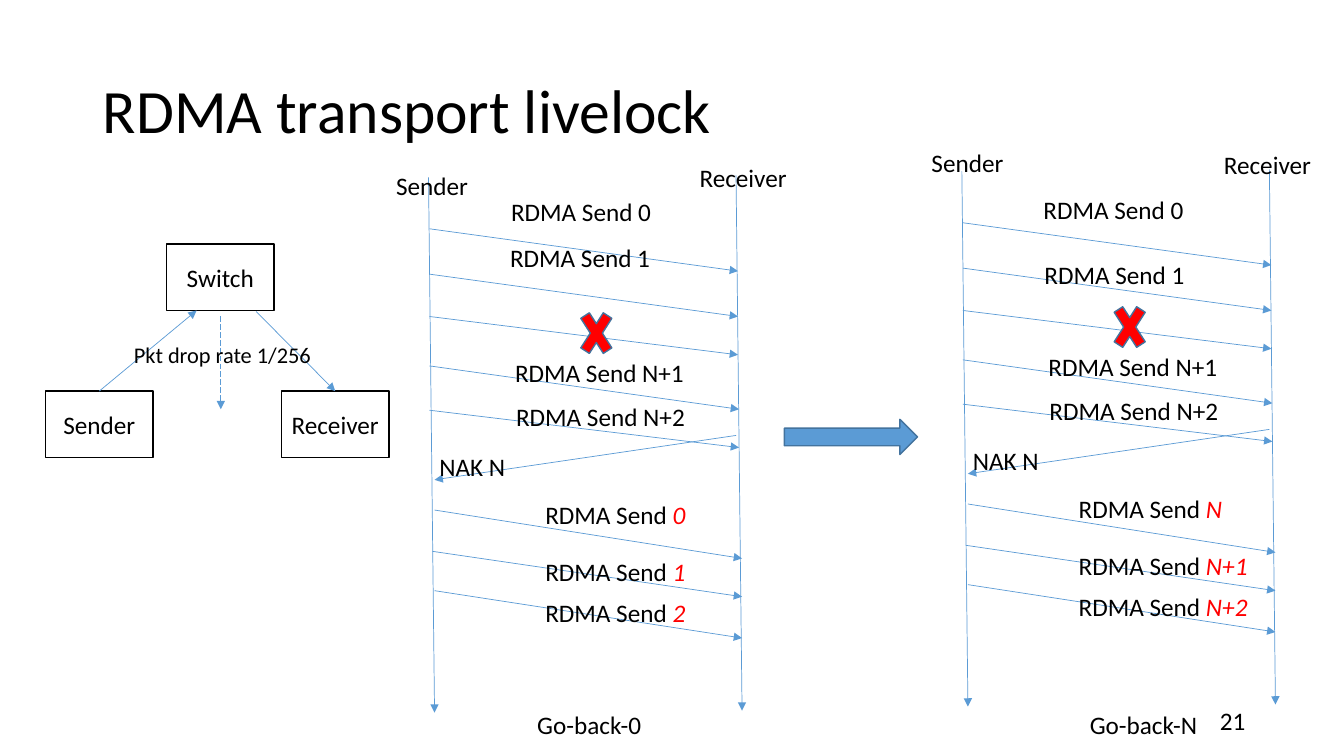
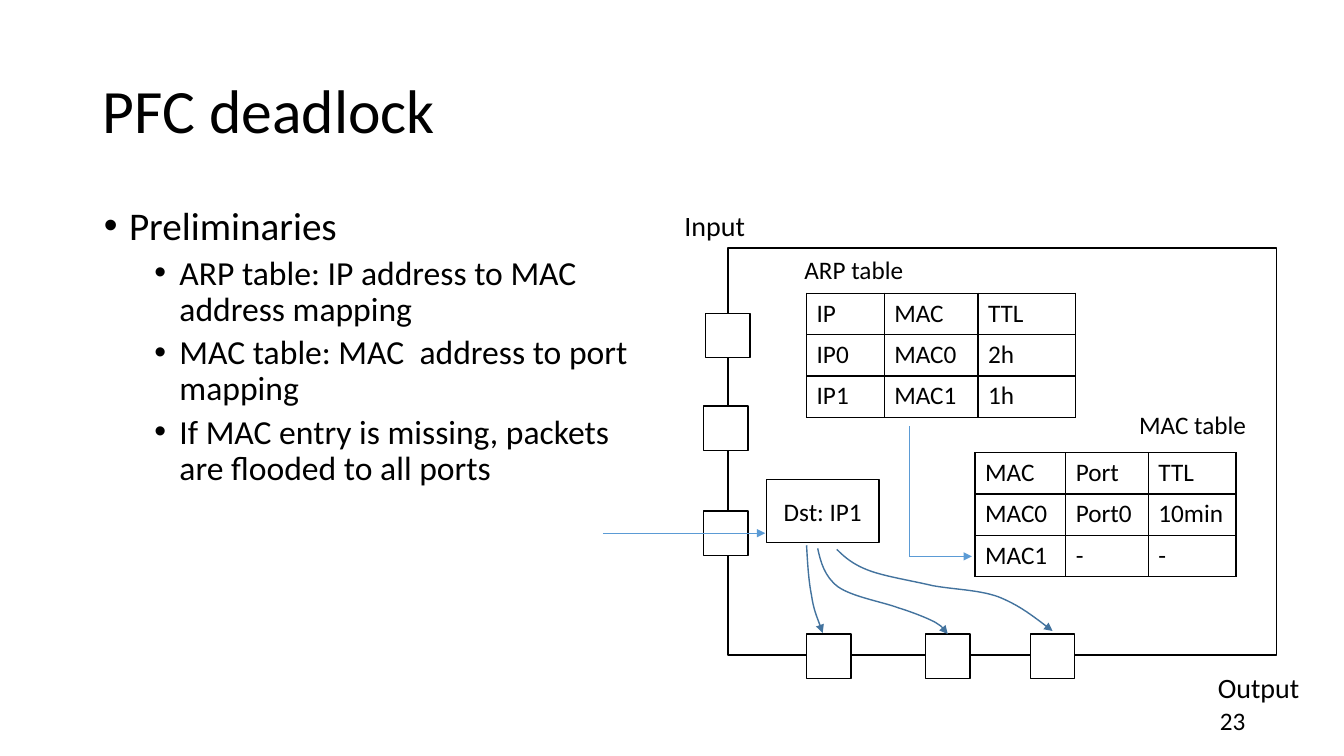
from lxml import etree
from pptx import Presentation
from pptx import util as u
from pptx.dml.color import RGBColor
from pptx.enum import dml, shapes, text
from pptx.oxml import ns

PX = 9144  # EMU per px, 100 px to the inch
FONT = "Calibri"
COLORS = {
    "ink": "000000",
    "paper": "FFFFFF",
    "line": "5B9BD5",
    "outline": "43739E",
    "alert": "FF0000",
}
TITLE_ONLY, TITLE_AND_BODY = 5, 1
SHAPE = shapes.MSO_SHAPE


def px(*values):
    return [u.Emu(value * PX) for value in values]


def color(name):
    return RGBColor.from_string(COLORS[name])


def sub_element(parent, tag, **attributes):
    return etree.SubElement(parent, ns.qn(tag), attributes)


# Text

def format_runs(paragraph, size, ink="ink"):
    for run in paragraph.runs:
        run.font.name = FONT
        run.font.size = u.Pt(size)
        run.font.color.rgb = color(ink)


def add_label(slide, left, top, width, words, size=18, accent=None):
    """Unwrapped text; the accent follows in red italics."""
    box = slide.shapes.add_textbox(*px(left, top, width, size * 2 + 4))
    frame = box.text_frame
    frame.word_wrap = False
    frame.auto_size = text.MSO_AUTO_SIZE.SHAPE_TO_FIT_TEXT
    frame.text = words
    paragraph = frame.paragraphs[0]
    format_runs(paragraph, size)
    if accent:
        run = paragraph.add_run()
        run.text = accent
        run.font.name = FONT
        run.font.size = u.Pt(size)
        run.font.italic = True
        run.font.color.rgb = color("alert")


def place(shape, left, top, width, height):
    shape.left, shape.top, shape.width, shape.height = px(left, top, width, height)


def new_slide(presentation, layout, title, number):
    slide = presentation.slides.add_slide(presentation.slide_layouts[layout])
    heading = slide.shapes.title
    place(heading, 92, 40, 1150, 145)
    frame = heading.text_frame
    frame.text = title
    frame.auto_size = text.MSO_AUTO_SIZE.NONE
    frame.vertical_anchor = text.MSO_ANCHOR.MIDDLE
    paragraph = frame.paragraphs[0]
    paragraph.alignment = text.PP_ALIGN.LEFT
    paragraph.line_spacing = 0.9
    format_runs(paragraph, 44)
    add_label(slide, 1200, 695, 50, str(number))
    return slide


def fill_list(body, items):
    """Bulleted list from (level, words) pairs."""
    frame = body.text_frame
    frame.text = "\n".join(words for _, words in items)
    frame.auto_size = text.MSO_AUTO_SIZE.NONE
    for paragraph, (level, _) in zip(frame.paragraphs, items):
        paragraph.level = level
        paragraph.line_spacing = 0.9
        paragraph.space_before = u.Pt(5 if level else 10)
        format_runs(paragraph, 24 if level else 28)
        properties = paragraph._p.get_or_add_pPr()
        properties.set("marL", str((25 + 50 * level) * PX))
        properties.set("indent", str(-25 * PX))
        sub_element(properties, "a:buFont", typeface="Arial")
        sub_element(properties, "a:buChar", char="•")


# Shapes and lines

def add_block(slide, kind, left, top, width, height, fill="paper", line="ink"):
    shape = slide.shapes.add_shape(kind, *px(left, top, width, height))
    shape.shadow.inherit = False
    shape.fill.solid()
    shape.fill.fore_color.rgb = color(fill)
    shape.line.color.rgb = color(line)
    shape.line.width = u.Pt(1)
    return shape


def add_box(slide, left, top, width, height, words):
    box = add_block(slide, SHAPE.RECTANGLE, left, top, width, height)
    frame = box.text_frame
    frame.text = words
    frame.word_wrap = False
    frame.vertical_anchor = text.MSO_ANCHOR.MIDDLE
    frame.paragraphs[0].alignment = text.PP_ALIGN.CENTER
    format_runs(frame.paragraphs[0], 18)
    return box


def add_arrowhead(shape):
    sub_element(shape.line._get_or_add_ln(), "a:tailEnd", type="triangle")


def add_line(slide, x1, y1, x2, y2, arrow=True, dashed=False):
    line = slide.shapes.add_connector(
        shapes.MSO_CONNECTOR.STRAIGHT, *px(x1, y1, x2, y2))
    line.line.color.rgb = color("line")
    line.line.width = u.Pt(0.5)
    if dashed:
        line.line.dash_style = dml.MSO_LINE.LONG_DASH
    if arrow:
        add_arrowhead(line)
    sub_element(line.element.spPr, "a:effectLst")
    return line


def add_curve(slide, start, controls):
    """Open Bezier curve; every three control points make one segment."""
    builder = slide.shapes.build_freeform(*start, scale=PX)
    builder.add_line_segments(controls, close=False)
    curve = builder.convert_to_shape()
    segments = list(curve.element.iter(ns.qn("a:lnTo")))
    outline = segments[0].getparent()
    for index in range(0, len(segments), 3):
        bezier = sub_element(outline, "a:cubicBezTo")
        for segment in segments[index:index + 3]:
            bezier.append(segment[0])
            outline.remove(segment)
    curve.shadow.inherit = False
    curve.fill.background()
    curve.line.color.rgb = color("outline")
    curve.line.width = u.Pt(1)
    add_arrowhead(curve)


# Tables

def set_borders(cell):
    properties = cell._tc.get_or_add_tcPr()
    for side in ("a:lnL", "a:lnR", "a:lnT", "a:lnB"):
        border = sub_element(properties, side, w=str(u.Pt(1)))
        fill = sub_element(border, "a:solidFill")
        sub_element(fill, "a:srgbClr", val=COLORS["ink"])


def add_grid(slide, left, top, widths, rows, row_height=41):
    frame = slide.shapes.add_table(
        len(rows), len(widths),
        *px(left, top, sum(widths), row_height * len(rows)))
    table = frame.table
    table.first_row = table.horz_banding = False
    for column, width in zip(table.columns, widths):
        column.width = u.Emu(width * PX)
    for row, values in zip(table.rows, rows):
        row.height = u.Emu(row_height * PX)
        for cell, value in zip(row.cells, values):
            cell.text = value
            format_runs(cell.text_frame.paragraphs[0], 18)
            set_borders(cell)
            cell.fill.background()


# Slide content

def add_sequence(slide, dx, dy, resent, labels):
    """Message sequence moved by dx, dy; labels have their own places."""
    messages = [
        (425, 176, 431, 707), (730, 174, 736, 705),  # lifelines
        (426, 227, 732, 269), (426, 272, 732, 314), (426, 314, 732, 352),
        (426, 363, 733, 406), (426, 407, 733, 444),
        (730, 432, 431, 476),  # NAK
        (431, 506, 736, 554), (429, 547, 736, 592), (431, 586, 736, 633),
    ]
    for x1, y1, x2, y2 in messages:
        add_line(slide, x1 + dx, y1 + dy, x2 + dx, y2 + dy)
    add_block(slide, SHAPE.MATH_MULTIPLY, 570 + dx, 297 + dy, 43, 67,
              "alert", "outline")
    for left, top, width, words in [
        (501, 350, 190, "RDMA Send N+1"),
        (502, 393, 190, "RDMA Send N+2"),
        (426, 443, 86, "NAK N"),
    ]:
        add_label(slide, left + dx, top + dy, width, words)
    for top, accent in zip((490, 547, 588), resent):
        width = 164 if len(accent) == 1 else 190
        add_label(slide, 531 + dx, top + dy, width, "RDMA Send ", accent=accent)
    for label in labels:
        add_label(slide, *label)


def build_livelock(presentation):
    slide = new_slide(presentation, TITLE_ONLY, "RDMA transport livelock", 21)
    add_block(slide, SHAPE.RIGHT_ARROW, 778, 416, 132, 35, "line", "outline")

    # Go-back-0 and Go-back-N
    add_sequence(slide, 0, 0, ("0", "1", "2"), [
        (383, 164, 92, "Sender"), (684, 156, 113, "Receiver"),
        (497, 190, 161, "RDMA Send 0"), (496, 236, 161, "RDMA Send 1"),
        (523, 699, 125, "Go-back-0"),
    ])
    add_sequence(slide, 529, -6, ("N", "N+1", "N+2"), [
        (914, 141, 92, "Sender"), (1204, 143, 113, "Receiver"),
        (1025, 188, 161, "RDMA Send 0"), (1026, 252, 161, "RDMA Send 1"),
        (1071, 699, 129, "Go-back-N"),
    ])

    # Test network
    sender = add_box(slide, 45, 388, 107, 66, "Sender")
    receiver = add_box(slide, 279, 388, 107, 66, "Receiver")
    add_box(slide, 165, 242, 107, 66, "Switch")
    add_line(slide, 98, 388, 195, 308).begin_connect(sender, 0)
    add_line(slide, 254, 309, 332, 388).end_connect(receiver, 0)
    add_line(slide, 219, 314, 219, 406, dashed=True)
    add_label(slide, 123, 334, 198, "Pkt drop rate 1/256", 16)


def build_deadlock(presentation):
    slide = new_slide(presentation, TITLE_AND_BODY, "PFC deadlock", 23)
    body = slide.placeholders[1]
    place(body, 93, 200, 545, 476)
    fill_list(body, [
        (0, "Preliminaries"),
        (1, "ARP table: IP address to MAC address mapping"),
        (1, "MAC table: MAC  address to port mapping"),
        (1, "If MAC entry is missing, packets are flooded to all ports"),
    ])

    # Switch with its tables and ports
    add_block(slide, SHAPE.RECTANGLE, 722, 246, 544, 404)
    add_grid(slide, 800, 291, (77, 93, 97), [
        ("IP", "MAC", "TTL"), ("IP0", "MAC0", "2h"), ("IP1", "MAC1", "1h")])
    add_grid(slide, 967, 449, (90, 82, 87), [
        ("MAC", "Port", "TTL"), ("MAC0", "Port0", "10min"), ("MAC1", "-", "-")])
    for left, top in [(700, 311), (698, 403), (698, 507),
                      (1022, 629), (918, 629), (800, 629)]:
        add_block(slide, SHAPE.RECTANGLE, left, top, 44, 44)
    add_label(slide, 669, 202, 81, "Input", 20)
    add_label(slide, 1198, 660, 102, "Output", 20)
    add_label(slide, 788, 247, 119, "ARP table")
    add_label(slide, 1120, 401, 127, "MAC table")

    # Lookup and flooding
    add_line(slide, 902, 423, 902, 552, arrow=False)
    add_line(slide, 902, 552, 964, 552)
    add_line(slide, 598, 529, 759, 529)
    add_box(slide, 760, 476, 112, 62, "Dst: IP1")
    add_curve(slide, (800, 541), [
        (801, 559), (802, 576), (805, 591), (807, 605), (812, 616), (816, 628)])
    add_curve(slide, (811, 544), [
        (814, 558), (818, 572), (831, 582), (845, 592), (875, 597), (891, 603),
        (907, 608), (919, 613), (927, 617), (935, 622), (937, 625), (940, 629)])
    add_curve(slide, (830, 545), [
        (838, 553), (846, 560), (862, 566), (878, 572), (904, 576), (925, 581),
        (947, 585), (970, 585), (990, 592), (1010, 600), (1027, 613), (1044, 626)])


def main():
    presentation = Presentation()
    presentation.slide_width, presentation.slide_height = px(1333, 750)
    build_livelock(presentation)
    build_deadlock(presentation)
    presentation.save("out.pptx")


if __name__ == "__main__":
    main()
